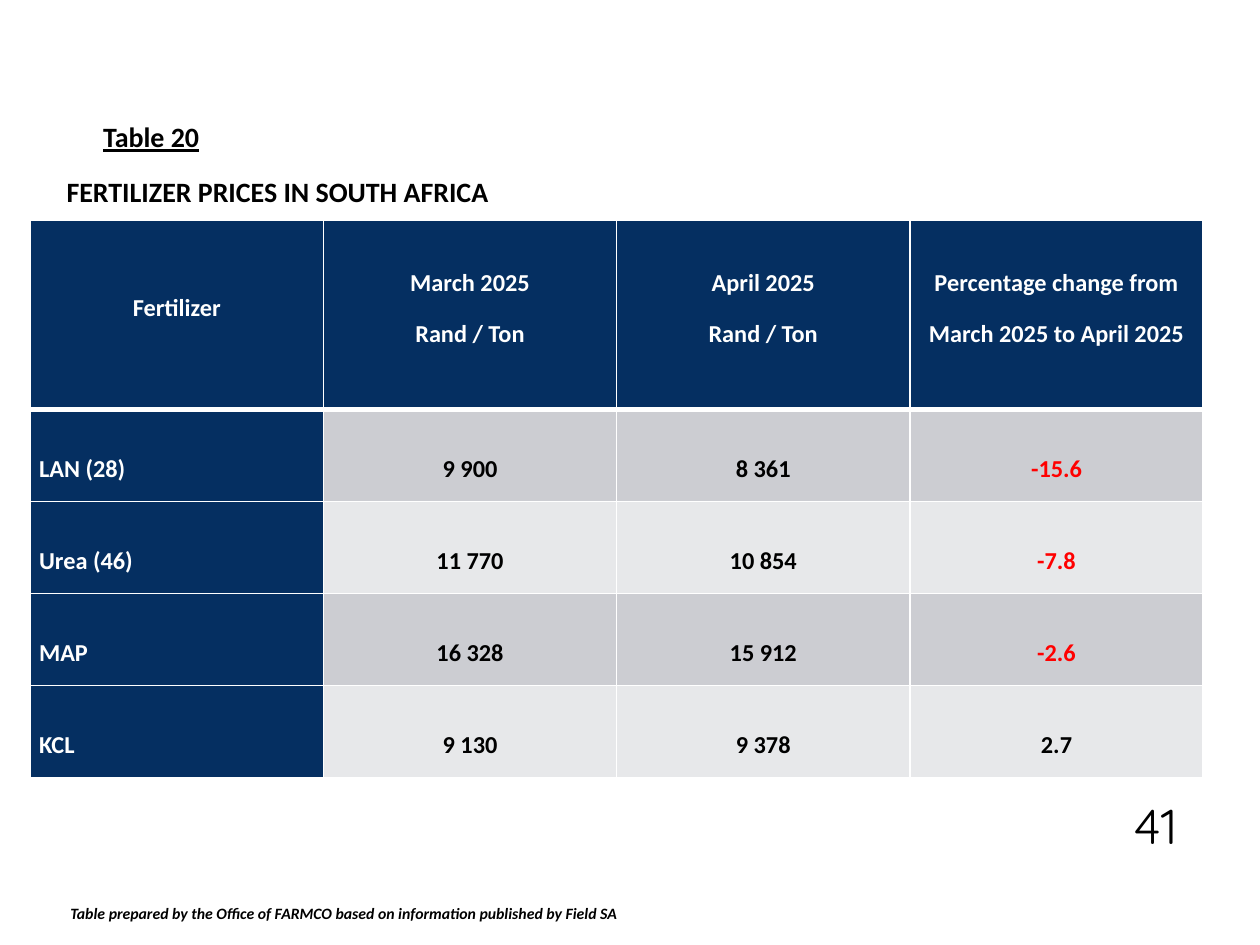
import pptx
import pptx.dml.color
import pptx.enum.text
import pptx.oxml
import pptx.oxml.ns
import pptx.util

ALIGN = pptx.enum.text.PP_ALIGN
ANCHOR = pptx.enum.text.MSO_ANCHOR
COLORS = {
    "black": "000000",
    "white": "FFFFFF",
    "navy": "052F61",
    "dark_band": "CCCDD2",
    "light_band": "E7E8EA",
    "fall": "FF0000",
}
GRID_COLUMNS, GRID_ROWS = 100, 75
UNIT = pptx.util.Inches(10) // GRID_COLUMNS
HEADER = [
    "Fertilizer",
    "March 2025\nRand / Ton",
    "April 2025\nRand / Ton",
    "Percentage change from March 2025 to April 2025",
]
PRICES = [
    ["LAN (28)", "9 900", "8 361", "-15.6"],
    ["Urea (46)", "11 770", "10 854", "-7.8"],
    ["MAP", "16 328", "15 912", "-2.6"],
    ["KCL", "9 130", "9 378", "2.7"],
]


def units(count):
    return round(count * UNIT)


def rgb(name):
    return pptx.dml.color.RGBColor.from_string(COLORS[name])


def write_text(frame, text, size=16, color="black", font="Calibri", bold=True, italic=False,
               underline=False, align=ALIGN.LEFT, baseline=0, indent=0):
    frame.word_wrap = True
    for index, line in enumerate(text.split("\n")):
        paragraph = frame.add_paragraph() if index else frame.paragraphs[0]
        paragraph.alignment = align
        if indent:
            paragraph._p.get_or_add_pPr().set("marL", str(units(indent)))
        run = paragraph.add_run()
        run.text = line
        run.font.name, run.font.size = font, pptx.util.Pt(size)
        run.font.bold, run.font.italic, run.font.underline = bold, italic, underline
        run.font.color.rgb = rgb(color)
        if baseline:
            run._r.get_or_add_rPr().set("baseline", str(baseline * 1000))


def add_label(slide, box, text, anchor=ANCHOR.MIDDLE, **text_format):
    frame = slide.shapes.add_textbox(*map(units, box)).text_frame
    frame.vertical_anchor = anchor
    write_text(frame, text, **text_format)


def set_borders(cell, top=1, bottom=1):
    widths = {"lnL": 1, "lnR": 1, "lnT": top, "lnB": bottom}
    for position, (side, width) in enumerate(widths.items()):
        border = pptx.oxml.parse_xml(
            f'<a:{side} {pptx.oxml.ns.nsdecls("a")} w="{pptx.util.Pt(width)}">'
            f'<a:solidFill><a:srgbClr val="{COLORS["white"]}"/></a:solidFill></a:{side}>')
        cell._tc.get_or_add_tcPr().insert(position, border)


def fill_cell(cell, text, fill, color, align, anchor):
    cell.fill.solid()
    cell.fill.fore_color.rgb = rgb(fill)
    cell.margin_left = cell.margin_right = units(0.7)
    cell.margin_top = cell.margin_bottom = 0
    cell.vertical_anchor = anchor
    write_text(cell.text_frame, text, size=24, color=color, align=align, baseline=30)


def add_price_table(slide, box, header_height):
    left, top, width, height = box
    row_count, column_count = len(PRICES) + 1, len(HEADER)
    table = slide.shapes.add_table(row_count, column_count, *map(units, box)).table
    for column in table.columns:
        column.width = units(width / column_count)
    for row in table.rows:
        row.height = units((height - header_height) / len(PRICES))
    table.rows[0].height = units(header_height)

    for cell, text in zip(table.rows[0].cells, HEADER):
        fill_cell(cell, text, "navy", "white", ALIGN.CENTER, ANCHOR.MIDDLE)
        set_borders(cell, bottom=3)
    for row_index, prices in enumerate(PRICES, start=1):
        band = "dark_band" if row_index % 2 else "light_band"
        for column_index, text in enumerate(prices):
            cell = table.cell(row_index, column_index)
            if column_index == 0:
                fill_cell(cell, text, "navy", "white", ALIGN.LEFT, ANCHOR.BOTTOM)
            else:
                color = "fall" if text.startswith("-") else "black"
                fill_cell(cell, text, band, color, ALIGN.CENTER, ANCHOR.BOTTOM)
            set_borders(cell, top=3 if row_index == 1 else 1)


def main():
    presentation = pptx.Presentation()
    presentation.slide_width = units(GRID_COLUMNS)
    presentation.slide_height = units(GRID_ROWS)
    slide = presentation.slides.add_slide(presentation.slide_layouts[6])
    add_label(slide, (4.6, 71.2, 94.2, 2.5),
              "Table prepared by the Office of FARMCO based on information published by Field SA",
              size=9, italic=True)
    add_label(slide, (7.2, 9, 14.1, 3.7), "Table 20", anchor=ANCHOR.TOP, underline=True)
    add_label(slide, (1.5, 13.3, 97.2, 3.7), "FERTILIZER PRICES IN SOUTH AFRICA", indent=2.8)
    add_label(slide, (85, 61, 9.4, 7.3), "41", anchor=ANCHOR.BOTTOM, size=28,
              font="Quicksand", bold=False, align=ALIGN.RIGHT)
    add_price_table(slide, (2.4, 17.5, 93.1, 44.2), header_height=15)
    presentation.save("out.pptx")


if __name__ == "__main__":
    main()
